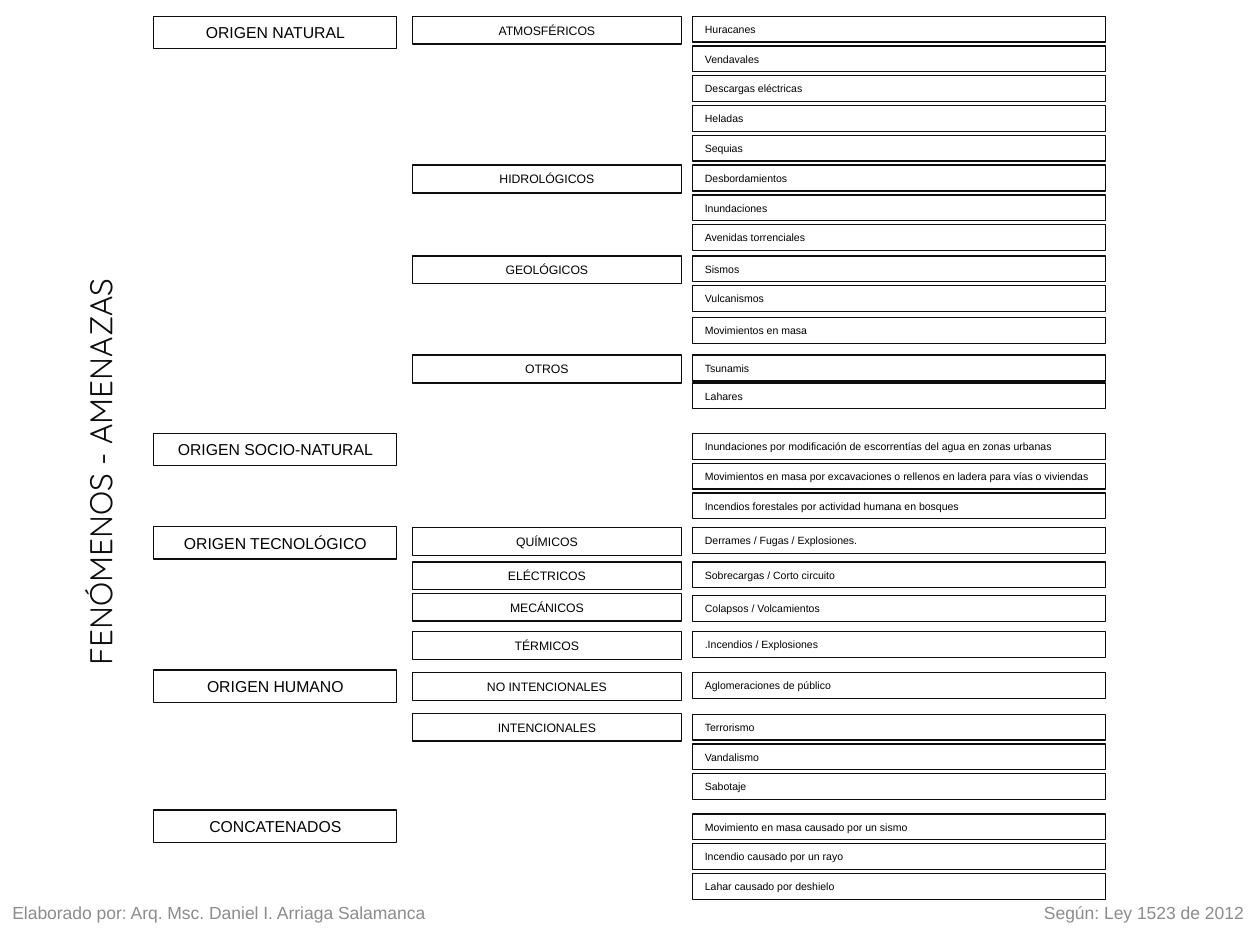
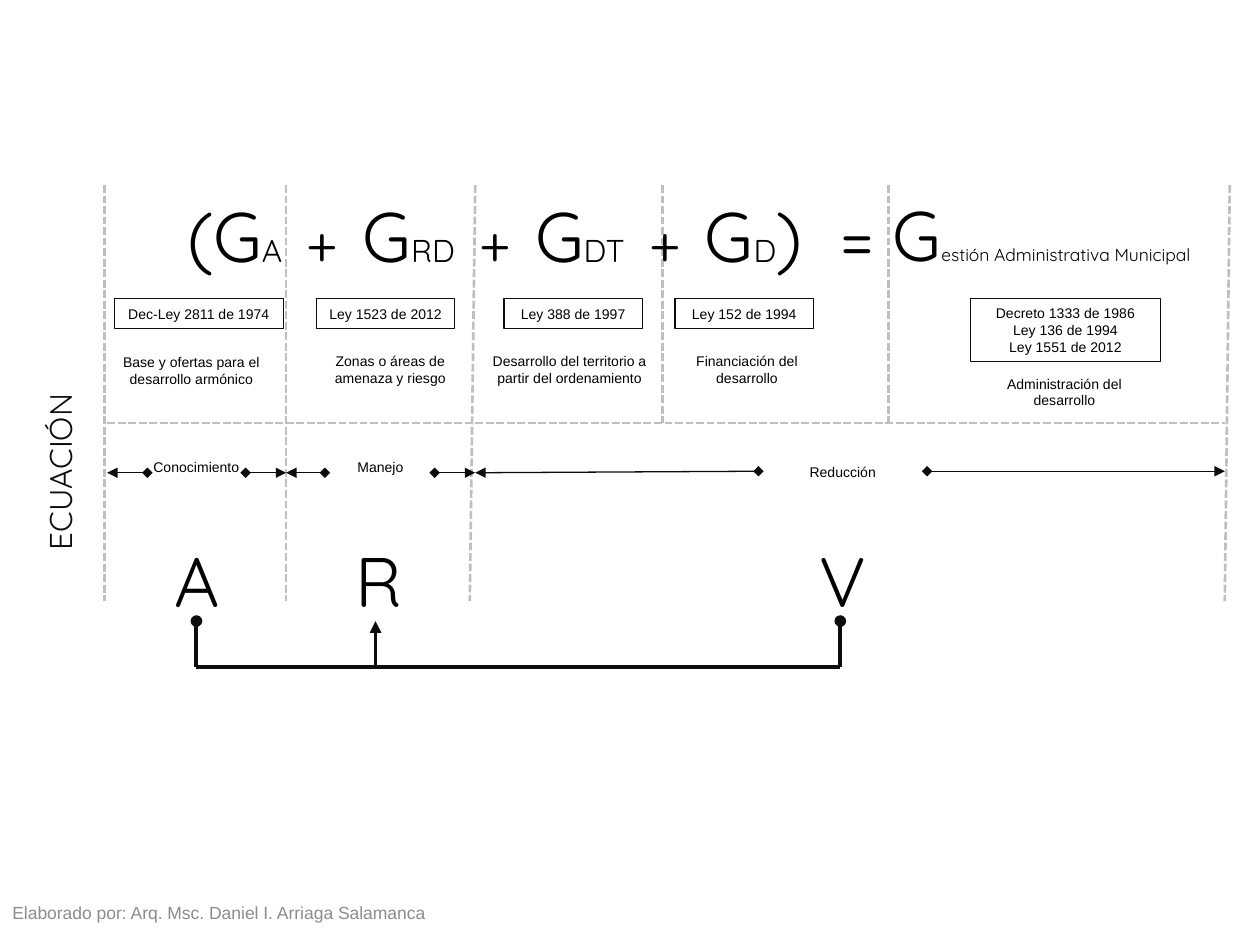
from dataclasses import dataclass
from typing import NamedTuple, Optional

from pptx import Presentation
from pptx.dml.color import RGBColor
from pptx.enum.dml import MSO_LINE
from pptx.enum.shapes import MSO_CONNECTOR as Connector, MSO_SHAPE as Shape
from pptx.enum.text import MSO_ANCHOR as Anchor, PP_ALIGN as Align
from pptx.oxml.ns import qn
from pptx.oxml.xmlchemy import OxmlElement
from pptx.slide import Slide
from pptx.util import Cm, Pt

INK = RGBColor(0x0D, 0x0D, 0x0D)
BLACK = RGBColor(0x00, 0x00, 0x00)
GUIDE_GRAY = RGBColor(0xBF, 0xBF, 0xBF)
FOOTER_GRAY = RGBColor(0x8C, 0x8C, 0x8C)
BODY_FONT = "Arial"
DISPLAY_FONT = "Quicksand"
GAP = " "


@dataclass(frozen=True)
class TextStyle:
    """Look of a text block, with an optional outlined box."""
    size: float
    font: str = BODY_FONT
    color: RGBColor = BLACK
    align: Align = Align.CENTER
    boxed: bool = False
    wrap: bool = True


@dataclass(frozen=True)
class LineStyle:
    """Look of a line and its two ends."""
    width: float
    color: RGBColor = INK
    dash: Optional[MSO_LINE] = None
    head: str = ""
    tail: str = ""


@dataclass(frozen=True)
class Column:
    """Column of equal boxes on the threats slide."""
    left: float
    width: float
    height: float
    style: TextStyle


class Box(NamedTuple):
    """Text and its place in centimetres."""
    text: str
    left: float
    top: float
    width: float
    height: float


class Line(NamedTuple):
    """Start and end of a line in centimetres."""
    x1: float
    y1: float
    x2: float
    y2: float


class Stack(NamedTuple):
    """Threats placed one under another from a given top."""
    top: float
    threats: tuple[str, ...]


TITLE = TextStyle(18, DISPLAY_FONT, INK)
FOOTER_LEFT = TextStyle(10, color=FOOTER_GRAY, align=Align.LEFT)
FOOTER_RIGHT = TextStyle(10, color=FOOTER_GRAY, align=Align.RIGHT)
SYMBOL = TextStyle(40, DISPLAY_FONT)
EQUALS = TextStyle(40, DISPLAY_FONT, wrap=False)
RESULT = TextStyle(40, DISPLAY_FONT, align=Align.LEFT)
LAW = TextStyle(8, boxed=True)
NOTE = TextStyle(8)

GUIDE = LineStyle(1.5, GUIDE_GRAY, MSO_LINE.SQUARE_DOT)
SPAN = LineStyle(0.75, head="diamond", tail="triangle")
BRACKET = LineStyle(2.25)
BRACKET_DOT = LineStyle(2.25, head="oval")
BRACKET_ARROW = LineStyle(2.25, head="triangle")

ORIGIN_COLUMN = Column(3.1, 4.9, 0.65, TextStyle(9, boxed=True))
CLASS_COLUMN = Column(8.31, 5.43, 0.56, TextStyle(7, boxed=True))
THREAT_COLUMN = Column(13.96, 8.33, 0.52, TextStyle(6, align=Align.LEFT, boxed=True))
THREAT_PITCH = 0.6

ORIGINS = {
    "ORIGEN NATURAL": 0.33,
    "ORIGEN SOCIO-NATURAL": 8.74,
    "ORIGEN TECNOLÓGICO": 10.62,
    "ORIGEN HUMANO": 13.51,
    "CONCATENADOS": 16.33,
}
CLASSES = {
    "ATMOSFÉRICOS": 0.33,
    "HIDROLÓGICOS": 3.33,
    "GEOLÓGICOS": 5.16,
    "OTROS": 7.16,
    "QUÍMICOS": 10.64,
    "ELÉCTRICOS": 11.33,
    "MECÁNICOS": 11.96,
    "TÉRMICOS": 12.73,
    "NO INTENCIONALES": 13.56,
    "INTENCIONALES": 14.38,
}
STACKS = (
    Stack(0.33, ("Huracanes", "Vendavales", "Descargas eléctricas", "Heladas", "Sequias",
                 "Desbordamientos", "Inundaciones", "Avenidas torrenciales")),
    Stack(5.16, ("Sismos", "Vulcanismos")),
    Stack(6.4, ("Movimientos en masa",)),
    Stack(7.16, ("Tsunamis",)),
    Stack(7.72, ("Lahares",)),
    Stack(8.74, ("Inundaciones por modificación de escorrentías del agua en zonas urbanas",
                 "Movimientos en masa por excavaciones o rellenos en ladera para vías o viviendas",
                 "Incendios forestales por actividad humana en bosques")),
    Stack(10.64, ("Derrames / Fugas / Explosiones.",)),
    Stack(11.33, ("Sobrecargas / Corto circuito",)),
    Stack(12.01, ("Colapsos / Volcamientos",)),
    Stack(12.73, (".Incendios / Explosiones",)),
    Stack(13.56, ("Aglomeraciones de público",)),
    Stack(14.4, ("Terrorismo", "Vandalismo", "Sabotaje")),
    Stack(16.41, ("Movimiento en masa causado por un sismo", "Incendio causado por un rayo",
                  "Lahar causado por deshielo")),
)

TERMS = ("A", "RD", "DT", "D")
LAWS = (
    Box("Dec-Ley 2811 de 1974", 2.31, 6.02, 3.4, 0.61),
    Box("Ley 1523 de 2012", 6.38, 6.02, 2.79, 0.61),
    Box("Ley 388 de 1997", 10.16, 6.02, 2.79, 0.61),
    Box("Ley 152 de 1994", 13.61, 6.02, 2.79, 0.61),
    Box("Decreto 1333 de 1986\nLey 136 de 1994\nLey 1551 de 2012", 19.56, 6.02, 3.84, 1.27),
)
NOTES = (
    Box("Base y ofertas para el desarrollo armónico", 2.16, 7.01, 3.4, 0.94),
    Box("Zonas o áreas de amenaza y riesgo", 6.17, 6.99, 3.4, 0.94),
    Box("Desarrollo del territorio a partir del ordenamiento", 9.58, 6.99, 3.81, 0.94),
    Box("Financiación del desarrollo", 13.36, 6.99, 3.4, 0.94),
    Box("Administración del desarrollo", 19.76, 7.44, 3.4, 0.94),
    Box("Conocimiento", 2.36, 9.12, 3.2, 0.61),
    Box("Manejo", 5.97, 9.12, 3.4, 0.61),
    Box("Reducción", 15.29, 9.22, 3.4, 0.61),
)
LETTERS = {"A": 2.72, "R": 6.4, "V": 15.75}
GUIDE_TOP, GUIDE_MIDDLE, GUIDE_BOTTOM = 3.73, 8.53, 12.12
GUIDES = (
    Line(2.11, GUIDE_TOP, 2.11, GUIDE_BOTTOM),
    Line(5.77, GUIDE_TOP, 5.77, GUIDE_BOTTOM),
    Line(9.58, GUIDE_TOP, 9.47, GUIDE_BOTTOM),
    Line(13.36, GUIDE_TOP, 13.36, GUIDE_MIDDLE),
    Line(17.91, GUIDE_TOP, 17.91, GUIDE_MIDDLE),
    Line(24.79, GUIDE_TOP, 24.69, GUIDE_BOTTOM),
    Line(2.16, GUIDE_MIDDLE, 24.69, GUIDE_MIDDLE),
)
SPANS = (
    Line(2.97, 9.53, 2.16, 9.53),
    Line(4.95, 9.53, 5.77, 9.53),
    Line(6.55, 9.53, 5.77, 9.53),
    Line(8.76, 9.53, 9.58, 9.53),
    Line(15.29, 9.5, 9.58, 9.53),
    Line(18.69, 9.5, 24.69, 9.5),
)
BRACKET_TOP, BRACKET_BASE = 12.52, 13.44
BRACKET_LEGS = {3.96: BRACKET_DOT, 7.57: BRACKET_ARROW, 16.94: BRACKET_DOT}


def add_text(s: Slide, box: Box, style: TextStyle, rotation: float = 0):
    """Draw a text block and return its shape."""
    place = [Cm(v) for v in box[1:]]
    if style.boxed:
        sp = s.shapes.add_shape(Shape.RECTANGLE, *place)
        sp.shadow.inherit = False
        sp.fill.background()
        sp.line.color.rgb = INK
        sp.line.width = Pt(0.75)
    else:
        sp = s.shapes.add_textbox(*place)
    sp.rotation = rotation
    tf = sp.text_frame
    tf.text = box.text
    tf.word_wrap = style.wrap
    tf.vertical_anchor = Anchor.MIDDLE if style.boxed else Anchor.TOP
    for p in tf.paragraphs:
        p.alignment = style.align
        for r in p.runs:
            format_run(r, style, style.size)
    return sp


def format_run(r, style: TextStyle, size: float) -> None:
    """Give a run its font, size and colour."""
    r.font.name = style.font
    r.font.size = Pt(size)
    r.font.color.rgb = style.color


def add_run(p, text: str, size: float):
    """Append a formula run and return it."""
    r = p.add_run()
    r.text = text
    format_run(r, SYMBOL, size)
    return r


def add_line(s: Slide, line: Line, style: LineStyle) -> None:
    """Draw a straight line with its dash and end marks."""
    c = s.shapes.add_connector(Connector.STRAIGHT, *[Cm(v) for v in line])
    c.line.color.rgb = style.color
    c.line.width = Pt(style.width)
    if style.dash:
        c.line.dash_style = style.dash
    sp_pr = c._element.spPr
    for tag, kind in (("a:headEnd", style.head), ("a:tailEnd", style.tail)):
        if kind:
            end = OxmlElement(tag)
            end.set("type", kind)
            sp_pr.find(qn("a:ln")).append(end)
    sp_pr.append(OxmlElement("a:effectLst"))


def add_base(prs, title: str, title_left: float) -> Slide:
    """Add a blank slide with the vertical title and the author footer."""
    s = prs.slides.add_slide(prs.slide_layouts[6])
    add_text(s, Box(title, title_left, 9.02, 9.8, 0.99), TITLE, 270)
    author = "Elaborado por: Arq. Msc. Daniel I. Arriaga Salamanca"
    add_text(s, Box(author, 0, 18.06, 9.8, 0.99), FOOTER_LEFT)
    return s


def add_entry(s: Slide, column: Column, text: str, top: float) -> None:
    """Draw one box of a column."""
    add_text(s, Box(text, column.left, top, column.width, column.height), column.style)


def add_formula(s: Slide) -> None:
    """Draw the sum of terms and its result."""
    p = add_text(s, Box("(", 2.57, 3.76, 14.81, 1.96), SYMBOL).text_frame.paragraphs[0]
    for i, term in enumerate(TERMS):
        if i:
            for text, size in ((GAP, 18), ("+", 32), (GAP, 18)):
                r = add_run(p, text, size)
                if text == GAP:
                    r._r.get_or_add_rPr().set("spc", "900")
        add_run(p, "G", 40)
        add_run(p, term, 18)
    add_run(p, ")", 40)
    add_text(s, Box("=", 16.69, 3.76, 1.19, 1.96), EQUALS)
    result = add_text(s, Box("G", 17.75, 3.73, 7.39, 1.96), RESULT)
    add_run(result.text_frame.paragraphs[0], "estión Administrativa Municipal", 10)


def build_threats(prs) -> None:
    """Build the slide of threats by origin."""
    s = add_base(prs, "FENÓMENOS - AMENAZAS", -2.9)
    for column, entries in ((ORIGIN_COLUMN, ORIGINS), (CLASS_COLUMN, CLASSES)):
        for text, top in entries.items():
            add_entry(s, column, text, top)
    for stack in STACKS:
        for i, threat in enumerate(stack.threats):
            add_entry(s, THREAT_COLUMN, threat, stack.top + i * THREAT_PITCH)
    add_text(s, Box("Según: Ley 1523 de 2012", 15.52, 18.06, 9.8, 0.99), FOOTER_RIGHT)


def build_equation(prs) -> None:
    """Build the slide of the management equation."""
    s = add_base(prs, "ECUACIÓN", -3.71)
    for lines, style in ((GUIDES, GUIDE), (SPANS, SPAN)):
        for line in lines:
            add_line(s, line, style)
    add_formula(s)
    for boxes, style in ((LAWS, LAW), (NOTES, NOTE)):
        for box in boxes:
            add_text(s, box, style)
    for letter, left in LETTERS.items():
        add_text(s, Box(letter, left, 10.72, 2.49, 1.96), SYMBOL)
    for x, style in BRACKET_LEGS.items():
        add_line(s, Line(x, BRACKET_TOP, x, BRACKET_BASE), style)
    add_line(s, Line(min(BRACKET_LEGS), BRACKET_BASE, max(BRACKET_LEGS), BRACKET_BASE), BRACKET)


def main() -> None:
    """Build and save the presentation."""
    prs = Presentation()
    prs.slide_width, prs.slide_height = Cm(25.4), Cm(19.05)
    build_threats(prs)
    build_equation(prs)
    prs.save("out.pptx")


if __name__ == "__main__":
    main()
